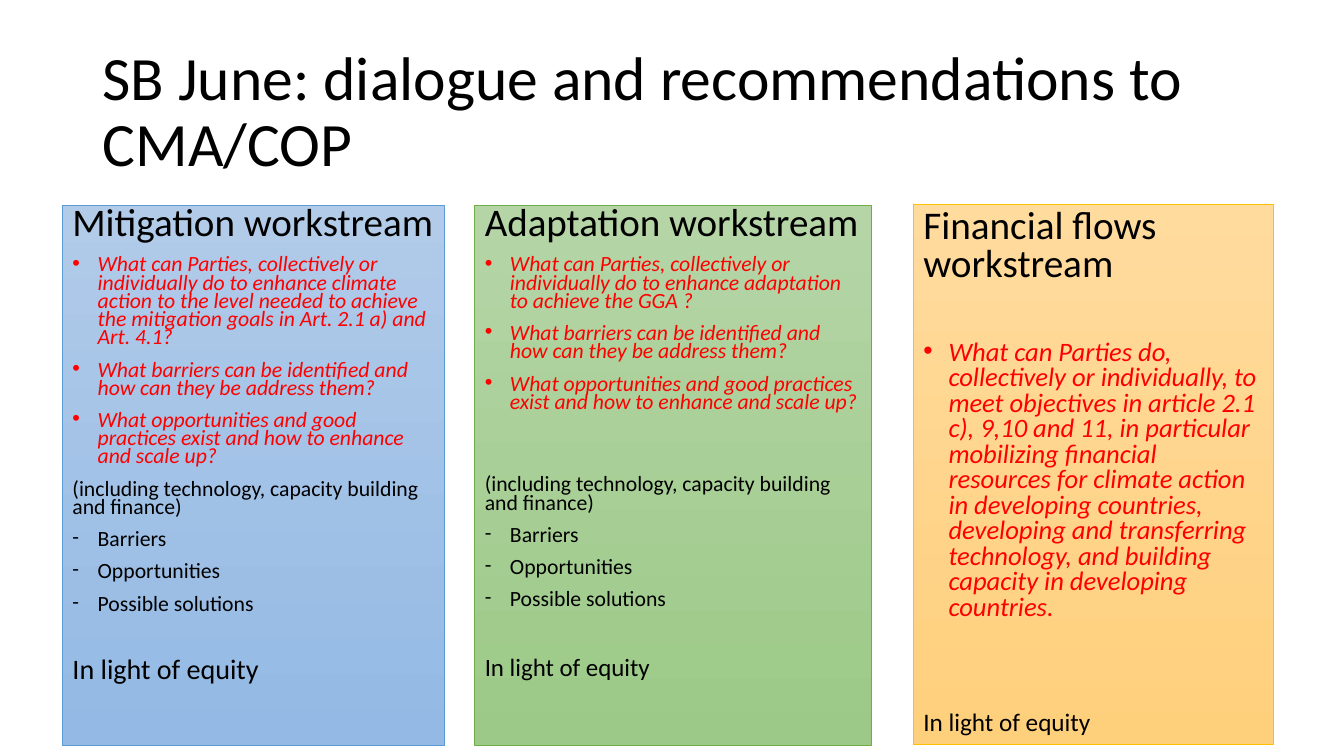
from lxml import etree
from pptx import Presentation
from pptx import util as u
from pptx.dml.color import RGBColor
from pptx.enum import shapes, text
from pptx.oxml.ns import qn

COLORS = {
    "black": "000000", "question": "FF0000",
    "blue_top": "B1CBE9", "blue_bottom": "93B9E4", "blue_line": "5B9BD5",
    "green_top": "B5D5A7", "green_bottom": "9CC987", "green_line": "70AD47",
    "gold_top": "FFDB9E", "gold_bottom": "FFD07C", "gold_line": "FFC000",
}
BARRIERS = "What barriers can be identified and how can they be address them?"
PRACTICES = "What opportunities and good practices exist and how to enhance and scale up?"
SCOPE = "(including technology, capacity building and finance)"
TOPICS = ["Barriers", "Opportunities", "Possible solutions"]
EQUITY = "In light of equity"


def color(name):
    return RGBColor.from_string(COLORS[name])


class WorkstreamSlide:
    font = "Calibri"
    grid_cell = u.Inches(0.1)
    indent = u.Inches(0.25)
    gap = 10

    def __init__(self, presentation):
        self.slide = presentation.slides.add_slide(presentation.slide_layouts[6])

    def box(self, left, top, width, height):
        return [round(cells * self.grid_cell) for cells in (left, top, width, height)]

    def style(self, paragraph, size, shade="black", italic=False, spacing=0.9, before=0):
        paragraph.alignment = text.PP_ALIGN.LEFT
        paragraph.line_spacing = spacing
        paragraph.space_before = u.Pt(before)
        for run in paragraph.runs:
            run.font.name = self.font
            run.font.size = u.Pt(size)
            run.font.italic = italic
            run.font.color.rgb = color(shade)

    def bullet(self, paragraph, mark):
        properties = paragraph._p.get_or_add_pPr()
        properties.set("marL", str(self.indent))
        properties.set("indent", str(-self.indent))
        typeface = "Arial" if mark == "•" else self.font
        etree.SubElement(properties, qn("a:buFont"), typeface=typeface)
        etree.SubElement(properties, qn("a:buChar"), char=mark)

    def title(self, words, *cells):
        shape = self.slide.shapes.add_textbox(*self.box(*cells))
        frame = shape.text_frame
        frame.word_wrap = True
        frame.vertical_anchor = text.MSO_ANCHOR.MIDDLE
        frame.text = words
        self.style(frame.paragraphs[0], 44)

    def panel(self, theme, cells, spacing, lines):
        shape = self.slide.shapes.add_shape(shapes.MSO_SHAPE.RECTANGLE, *self.box(*cells))
        shape.shadow.inherit = False
        shape.fill.gradient()
        shape.fill.gradient_angle = 270
        for stop, end in zip(shape.fill.gradient_stops, ("top", "bottom")):
            stop.color.rgb = color(f"{theme}_{end}")
            stop.position = 0 if end == "top" else 1
        shape.line.color.rgb = color(f"{theme}_line")
        shape.line.width = u.Pt(0.5)
        frame = shape.text_frame
        frame.word_wrap = True
        frame.vertical_anchor = text.MSO_ANCHOR.TOP
        for index, (words, size, mark, before) in enumerate(lines):
            paragraph = frame.add_paragraph() if index else frame.paragraphs[0]
            paragraph.text = words
            question = mark == "•"
            shade = "question" if question else "black"
            self.style(paragraph, size, shade, question, spacing, before)
            if mark:
                self.bullet(paragraph, mark)

    def action_panel(self, theme, cells, heading, question, scope_gap, equity_size, equity_gap):
        lines = [(heading, 27.9, None, self.gap)]
        lines += [(words, 15.5, "•", self.gap) for words in (question, BARRIERS, PRACTICES)]
        lines.append((SCOPE, 15.5, None, scope_gap))
        lines += [(words, 15.5, "-", self.gap) for words in TOPICS]
        lines.append((EQUITY, equity_size, None, equity_gap))
        self.panel(theme, cells, 0.7, lines)


def main():
    presentation = Presentation()
    presentation.slide_width = u.Inches(13.33)
    presentation.slide_height = u.Inches(7.5)
    slide = WorkstreamSlide(presentation)
    slide.title("SB June: dialogue and recommendations to CMA/COP", 9.2, 4, 115, 14.5)
    slide.action_panel(
        "blue", (6.2, 20.4, 37.9, 53.6), "Mitigation workstream",
        "What can Parties, collectively or individually do to enhance climate action to the "
        "level needed to achieve the mitigation goals in Art. 2.1 a) and Art. 4.1?",
        scope_gap=10, equity_size=20.1, equity_gap=33)
    slide.action_panel(
        "green", (47.1, 20.4, 39.3, 53.6), "Adaptation workstream",
        "What can Parties, collectively or individually do to enhance adaptation "
        "to achieve the GGA ?",
        scope_gap=46, equity_size=17.8, equity_gap=35)
    slide.panel("gold", (90.6, 20.3, 35.7, 53.6), 0.8, [
        ("Financial flows workstream", 28, None, slide.gap),
        ("What can Parties do, collectively or individually, to meet objectives in article "
         "2.1 c), 9,10 and 11, in particular mobilizing financial resources for climate action "
         "in developing countries, developing and transferring technology, and building "
         "capacity in developing countries.", 19, "•", 40),
        (EQUITY, 18, None, 65),
    ])
    presentation.save("out.pptx")


if __name__ == "__main__":
    main()
